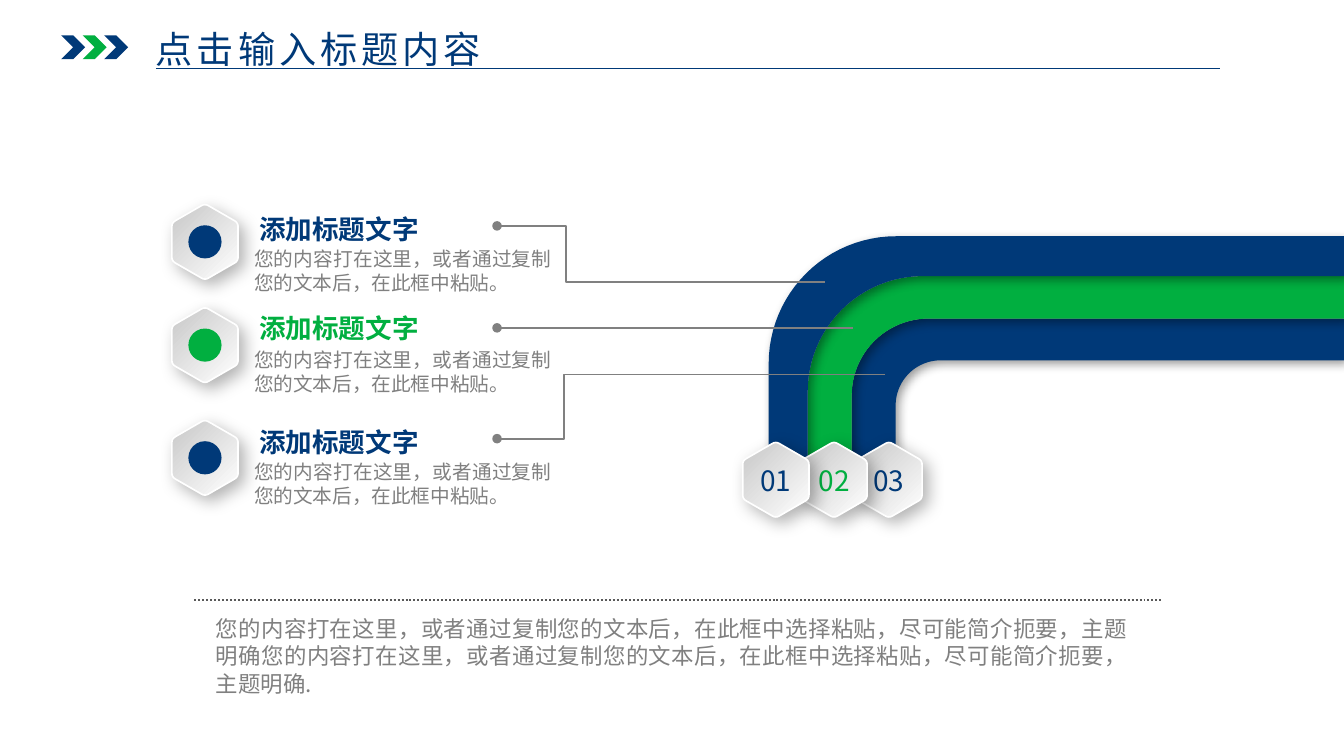
import math

import pptx
import pptx.dml.color
import pptx.enum.dml
import pptx.enum.shapes
import pptx.enum.text
import pptx.oxml
import pptx.oxml.ns
import pptx.util
from lxml import etree

Pt = pptx.util.Pt
RGB = pptx.dml.color.RGBColor
SHAPE = pptx.enum.shapes.MSO_SHAPE
ALIGN = pptx.enum.text.PP_ALIGN
qn = pptx.oxml.ns.qn

NAVY = RGB(0x00, 0x39, 0x78)
GREEN = RGB(0x01, 0xAF, 0x40)
GRAY = RGB(0x80, 0x80, 0x80)
DARK_GRAY = RGB(0x59, 0x59, 0x59)
SILVER = RGB(0xC9, 0xC9, 0xC9)
WHITE = RGB(0xFF, 0xFF, 0xFF)

WIDTH, HEIGHT = 1012.3, 569.5
HEADING = "添加标题文字"
BODY = "您的内容打在这里，或者通过复制您的文本后，在此框中粘贴。"
SUMMARY = ("您的内容打在这里，或者通过复制您的文本后，在此框中选择粘贴，尽可能简介扼要，主题明确"
           "您的内容打在这里，或者通过复制您的文本后，在此框中选择粘贴，尽可能简介扼要，主题明确.")


def arc(x, y, r):
    """Quarter turn from the left side up to the top, in a corner at (x, y)."""
    angles = [math.pi / 2 * i / 24 for i in range(25)]
    return [(x + r - r * math.cos(a), y + r - r * math.sin(a)) for a in angles]


def rounded_hexagon(cx, cy, radius=28.8, cut=3):
    corners = [(cx + radius * math.sin(math.radians(60 * i)),
                cy - radius * math.cos(math.radians(60 * i))) for i in range(6)]
    points = []
    for i, (x, y) in enumerate(corners):
        (ax, ay), (bx, by) = corners[i - 1], corners[(i + 1) % 6]
        k = cut / radius
        for t in (0, 0.25, 0.5, 0.75, 1):
            u, v = k * (1 - t) ** 2, k * t ** 2
            points.append((x + u * (ax - x) + v * (bx - x),
                           y + u * (ay - y) + v * (by - y)))
    return points


class Deck:
    font = "Noto Sans CJK SC"

    def __init__(self):
        self.prs = pptx.Presentation()
        self.prs.slide_width, self.prs.slide_height = Pt(WIDTH), Pt(HEIGHT)
        self.slide = self.prs.slides.add_slide(self.prs.slide_layouts[6])
        self.shapes = self.slide.shapes

    def text(self, x, y, w, h, words, size, color, align=ALIGN.LEFT,
             bold=False, spacing=0, inset=(7.2, 3.6)):
        tf = self.shapes.add_textbox(Pt(x), Pt(y), Pt(w), Pt(h)).text_frame
        tf.word_wrap = True
        tf.margin_left = tf.margin_right = Pt(inset[0])
        tf.margin_top = tf.margin_bottom = Pt(inset[1])
        p = tf.paragraphs[0]
        p.text, p.alignment = words, align
        p.line_spacing = Pt(round(size * 1.22, 1))
        p.font.size, p.font.bold = Pt(size), bold
        p.font.color.rgb = color
        p.font.name = self.font
        props = p._p.pPr.find(qn("a:defRPr"))
        etree.SubElement(props, qn("a:ea")).set("typeface", self.font)
        if spacing:
            props.set("spc", str(spacing * 100))

    def preset(self, kind, x, y, size, color):
        sp = self.shapes.add_shape(kind, Pt(x), Pt(y), Pt(size), Pt(size))
        sp.shadow.inherit = False
        sp.fill.solid()
        sp.fill.fore_color.rgb = color
        sp.line.fill.background()

    def outline(self, points, close=True):
        pts = [(Pt(x), Pt(y)) for x, y in points]
        builder = self.shapes.build_freeform(*pts[0])
        builder.add_line_segments(pts[1:], close=close)
        sp = builder.convert_to_shape()
        sp.shadow.inherit = False
        return sp

    def shadow(self, sp, alpha, blur, dist):
        effects = sp._element.spPr.find(qn("a:effectLst"))
        outer = etree.SubElement(effects, qn("a:outerShdw"), {
            "blurRad": str(Pt(blur)), "dist": str(Pt(dist)), "dir": "2700000",
            "algn": "tl", "rotWithShape": "0"})
        black = etree.SubElement(outer, qn("a:srgbClr"), val="000000")
        etree.SubElement(black, qn("a:alpha"), val=str(alpha * 1000))

    def band(self, outer, inner, color):
        """Pipe between two bent edges, each given as left, top, radius."""
        foot = 354.2
        points = [(outer[0], foot), *arc(*outer), (WIDTH, outer[1]),
                  (WIDTH, inner[1]), *reversed(arc(*inner)), (inner[0], foot)]
        sp = self.outline(points)
        sp.fill.solid()
        sp.fill.fore_color.rgb = color
        sp.line.fill.background()
        self.shadow(sp, 40, 8, 4)

    def hexagon(self, cx, cy):
        sp = self.outline(rounded_hexagon(cx, cy))
        sp.fill.gradient()
        sp.fill.gradient_angle = 315
        for stop, color, pos in zip(sp.fill.gradient_stops, (SILVER, WHITE), (0.02, 1)):
            stop.color.rgb, stop.position = color, pos
        sp.line.color.rgb, sp.line.width = WHITE, Pt(1.25)
        self.shadow(sp, 30, 13, 6)

    def badge(self, cx, number, color):
        self.hexagon(cx, 361.4)
        self.text(cx - 22.7, 344.9, 45.4, 33.1, number, 21.1, color, ALIGN.CENTER)

    def line(self, x1, x2, y, color, width, dash=None):
        cxn = self.shapes.add_connector(
            pptx.enum.shapes.MSO_CONNECTOR.STRAIGHT, Pt(x1), Pt(y), Pt(x2), Pt(y))
        cxn.line.color.rgb, cxn.line.width = color, Pt(width)
        if dash:
            cxn.line.dash_style = dash
        etree.SubElement(cxn._element.spPr, qn("a:effectLst"))

    def leader(self, end_x, end_y, bend_x, dot_y):
        """Line from a pipe to the dot beside a heading."""
        dot_x = 374.4
        if end_y == dot_y:
            self.line(end_x, dot_x, dot_y, GRAY, 1.25)
        else:
            sp = self.outline([(end_x, end_y), (bend_x, end_y),
                               (bend_x, dot_y), (dot_x, dot_y)], close=False)
            sp.fill.background()
            sp.line.color.rgb, sp.line.width = GRAY, Pt(1.25)
        self.preset(SHAPE.OVAL, dot_x - 3.6, dot_y - 3.6, 7.2, GRAY)

    def item(self, hex_y, heading_y, body_y, color):
        self.hexagon(154.4, hex_y)
        self.text(183.6, heading_y, 143.3, 31.7, HEADING, 20, color, ALIGN.CENTER, bold=True)
        self.text(184.3, body_y, 238.3, 43.2, BODY, 14.8, GRAY, ALIGN.JUSTIFY)
        self.preset(SHAPE.OVAL, 154.4 - 12.5, hex_y - 12.5, 25, color)


def main():
    deck = Deck()

    # Bent pipes with numbered badges
    edges = [(579, 178, 96), (608.4, 208, 87), (641.5, 240, 58), (674.6, 271.4, 34)]
    deck.band(edges[2], edges[3], NAVY)
    deck.badge(669.6, "03", NAVY)
    deck.band(edges[1], edges[2], GREEN)
    deck.band(edges[0], edges[1], NAVY)
    deck.badge(628.2, "02", GREEN)
    deck.badge(584.4, "01", NAVY)

    # Leader lines
    deck.leader(621.4, 212.4, 426.2, 170.2)
    deck.leader(642.2, 247, None, 247)
    deck.leader(666.7, 282.2, 424.8, 330.5)

    # Items on the left
    deck.item(182.2, 156.2, 182.2, NAVY)
    deck.item(260, 231.1, 258.5, GREEN)
    deck.item(344.9, 316.8, 342.7, NAVY)

    # Summary
    deck.line(146.2, 874.8, 452.2, DARK_GRAY, 1.5, pptx.enum.dml.MSO_LINE.ROUND_DOT)
    deck.text(155.5, 459.4, 701.3, 89.3, SUMMARY, 16.9, GRAY, ALIGN.JUSTIFY)

    # Title bar
    for i, color in enumerate((NAVY, GREEN, NAVY)):
        deck.preset(SHAPE.CHEVRON, 46.1 + 16.2 * i, 26.6, 18, color)
    deck.text(111.6, 16.6, 308.9, 39.6, "点击输入标题内容", 28, NAVY,
              spacing=3, inset=(5.8, 2.9))
    deck.line(117.4, 918.7, 51.8, NAVY, 0.5)

    deck.prs.save("out.pptx")


if __name__ == "__main__":
    main()
